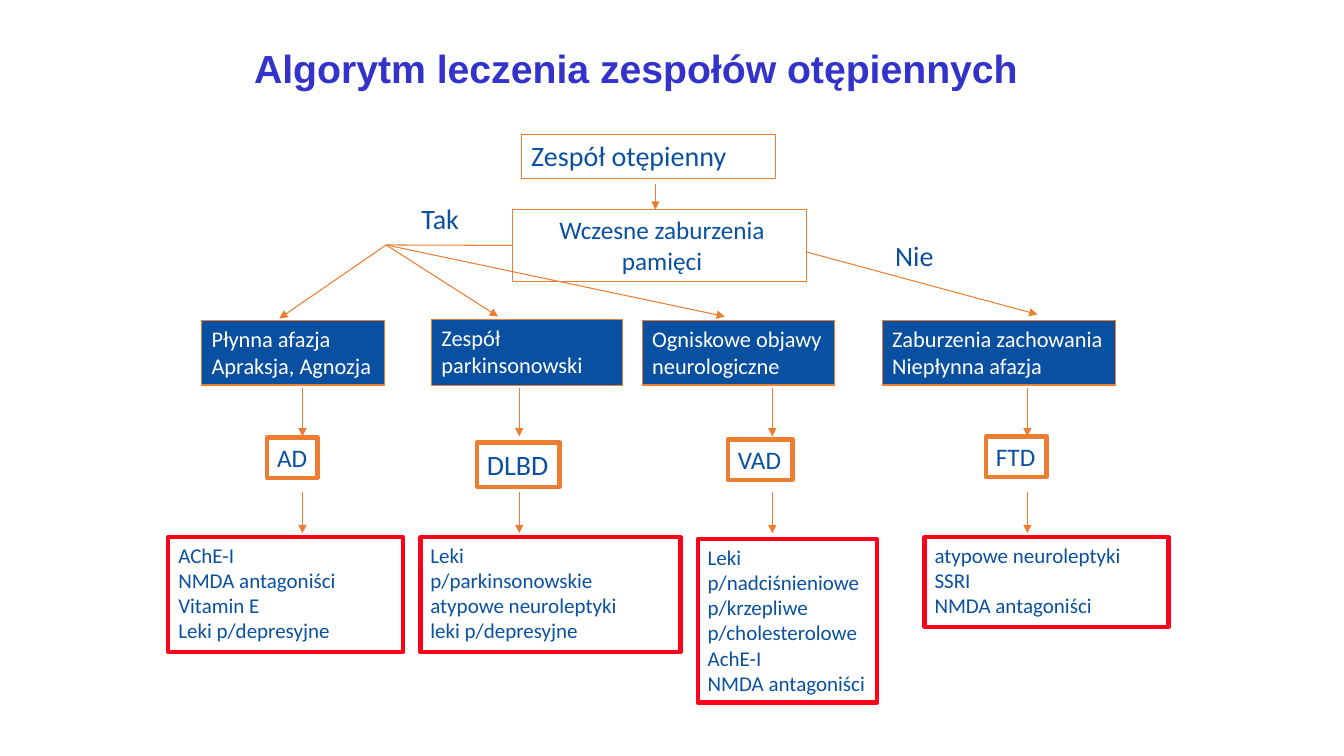
from lxml import etree
from pptx import Presentation
from pptx.dml.color import RGBColor
from pptx.enum.shapes import MSO_CONNECTOR as Link, MSO_SHAPE as Shape
from pptx.enum.text import MSO_ANCHOR as Anchor, MSO_AUTO_SIZE as Fit, PP_ALIGN as Align
from pptx.oxml.ns import qn
from pptx.util import Inches, Pt

WHITE = RGBColor(0xFF, 0xFF, 0xFF)
NAVY = RGBColor(0x0A, 0x50, 0xA1)
BLUE = RGBColor(0x33, 0x33, 0xCC)
ORANGE = RGBColor(0xED, 0x7D, 0x31)
RED = RGBColor(0xFF, 0x01, 0x1A)

# Box styles: fill, line colour, line width, text colour
PLAIN = (None, ORANGE, 0.75, NAVY)
SIGN = (NAVY, ORANGE, 0.75, WHITE)
NAME = (None, ORANGE, 3, NAVY)
DRUG = (None, RED, 3, NAVY)

# One branch a row: arrow x, then signs, diagnosis and drugs,
# each as place, text size, wrap and lines
BRANCHES = [
    (3,
     ((2, 3.18, 1.81, 0.64), 16, False, ["Płynna afazja", "Apraksja, Agnozja"]),
     ((2.65, 4.34, 0.5, 0.4), 18, False, ["AD"]),
     ((1.67, 5.33, 2.33, 1.14), 15, True,
      ["AChE-I", "NMDA antagoniści", "Vitamin E", "Leki p/depresyjne"])),
    (5.15,
     ((4.28, 3.17, 1.89, 0.65), 16, True, ["Zespół", "parkinsonowski"]),
     ((4.73, 4.39, 0.82, 0.44), 20, False, ["DLBD"]),
     ((4.17, 5.33, 2.58, 1.14), 15, True,
      ["Leki", "p/parkinsonowskie", "atypowe neuroleptyki", "leki p/depresyjne"])),
    (7.66,
     ((6.37, 3.18, 1.91, 0.64), 16, False, ["Ogniskowe objawy", "neurologiczne"]),
     ((7.22, 4.36, 0.64, 0.4), 18, False, ["VAD"]),
     ((6.92, 5.35, 1.78, 1.62), 15, False,
      ["Leki", "p/nadciśnieniowe", "p/krzepliwe", "p/cholesterolowe",
       "AchE-I", "NMDA antagoniści"])),
    (10.19,
     ((8.75, 3.18, 2.31, 0.64), 16, False,
      ["Zaburzenia zachowania", "Niepłynna afazja"]),
     ((9.78, 4.33, 0.6, 0.4), 18, False, ["FTD"]),
     ((9.17, 5.33, 2.42, 0.89), 15, True,
      ["atypowe neuroleptyki", "SSRI", "NMDA antagoniści"])),
]


def apply(item, form):
    for key, value in form.items():
        setattr(item, key, value)


def write(frame, lines, size, color, wrap, align=Align.LEFT):
    apply(frame, {"word_wrap": wrap, "auto_size": Fit.SHAPE_TO_FIT_TEXT,
                  "vertical_anchor": Anchor.TOP})
    frame.text = "\n".join(lines)
    for para in frame.paragraphs:
        para.alignment = align
        apply(para.font, {"name": "Calibri", "size": Pt(size)})
        para.font.color.rgb = color


def add_box(slide, style, place, size, wrap, lines, align=Align.LEFT):
    fill, edge, width, color = style
    box = slide.shapes.add_shape(Shape.RECTANGLE, *map(Inches, place))
    box.shadow.inherit = False
    if fill is None:
        box.fill.background()
    else:
        box.fill.solid()
        box.fill.fore_color.rgb = fill
    box.line.color.rgb = edge
    box.line.width = Pt(width)
    write(box.text_frame, lines, size, color, wrap, align)
    return box


def add_label(slide, place, text):
    label = slide.shapes.add_textbox(*map(Inches, place))
    write(label.text_frame, [text], 20, NAVY, False)


def add_line(slide, start, end, head=True):
    line = slide.shapes.add_connector(Link.STRAIGHT, *map(Inches, start + end))
    line.line.color.rgb = ORANGE
    line.line.width = Pt(0.75)
    if head:
        etree.SubElement(line.line._get_or_add_ln(), qn("a:tailEnd"), type="triangle")
    etree.SubElement(line._element.spPr, qn("a:effectLst"))
    return line


def add_title(slide, text):
    title = slide.shapes.title
    apply(title, {"left": Inches(2.42), "top": Inches(0.33),
                  "width": Inches(8.5), "height": Inches(0.75)})
    title.text_frame.text = text
    title.text_frame.vertical_anchor = Anchor.MIDDLE
    para = title.text_frame.paragraphs[0]
    apply(para, {"alignment": Align.LEFT, "line_spacing": 0.9})
    apply(para.font, {"name": "Arial", "size": Pt(28), "bold": True})
    para.font.color.rgb = BLUE


def main():
    deck = Presentation()
    apply(deck, {"slide_width": Inches(13.33), "slide_height": Inches(7.5)})
    slide = deck.slides.add_slide(deck.slide_layouts[5])
    add_title(slide, "Algorytm leczenia zespołów otępiennych")

    # Start and first question
    add_box(slide, PLAIN, (5.17, 1.33, 2.52, 0.44), 20, True, ["Zespół otępienny"])
    query = add_box(slide, PLAIN, (5.08, 2.08, 2.92, 0.71), 18, True,
                    ["Wczesne zaburzenia", "pamięci"], Align.CENTER)
    query.text_frame.margin_left = Inches(0.15)
    add_line(slide, (6.5, 1.83), (6.5, 2.08))

    # Yes and no paths
    fork = (3.83, 2.43)
    stem = add_line(slide, (5.08, 2.43), fork, head=False)
    stem.begin_connect(query, 1)
    for end in [(2.77, 3.16), (4.94, 3.14), (7.19, 3.14)]:
        add_line(slide, fork, end)
    add_line(slide, (8, 2.5), (10.29, 3.12))
    add_label(slide, (4.08, 1.95, 0.58, 0.44), "Tak")
    add_label(slide, (8.78, 2.32, 0.59, 0.44), "Nie")

    # Branches from signs to drugs
    for x, *boxes in BRANCHES:
        for style, box in zip((SIGN, NAME, DRUG), boxes):
            add_box(slide, style, *box)
        for top, end in [(3.85, 4.33), (4.88, 5.29)]:
            add_line(slide, (x, top), (x, end))

    deck.save("out.pptx")


if __name__ == "__main__":
    main()
